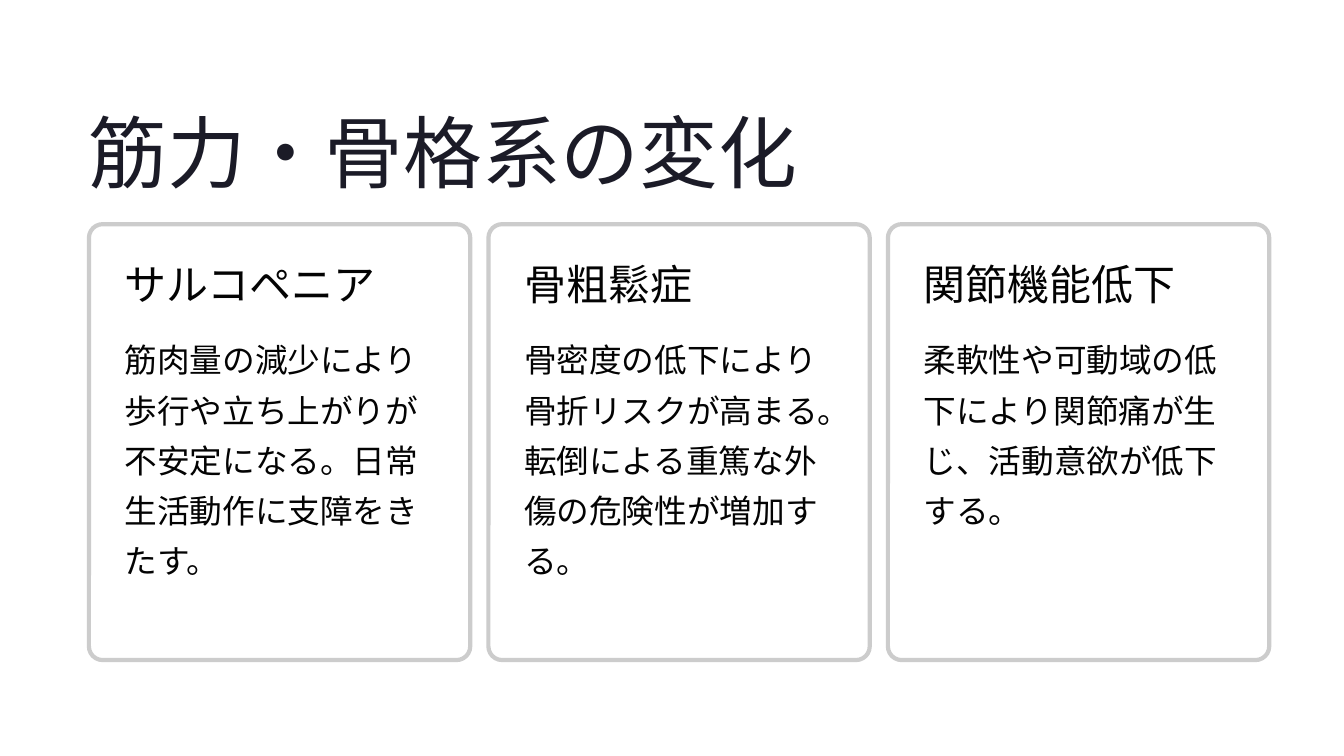
from lxml import etree
from pptx import Presentation
from pptx.dml.color import RGBColor
from pptx.enum import shapes, text
from pptx.oxml.ns import qn
from pptx.util import Cm, Pt

COLORS = {"title": "1B1B27", "body": "030303", "card": "FFFFFF", "border": "CCCCCC"}
CARDS = [
    ("サルコペニア", "筋肉量の減少により歩行や立ち上がりが不安定になる。日常生活動作に支障をきたす。", 5),
    ("骨粗鬆症", "骨密度の低下により骨折リスクが高まる。転倒による重篤な外傷の危険性が増加する。", 5),
    ("関節機能低下", "柔軟性や可動域の低下により関節痛が生じ、活動意欲が低下する。", 4),
]
LEFT, CARD_TOP = 2.69, 6.78
CARD_W, CARD_H, GAP = 11.53, 13.18, 0.55
PAD, BODY_LINE_H = 1.08, 1.7


def rgb(name):
    return RGBColor.from_string(COLORS[name])


def add_text(slide, content, box, *, size, leading, font="Inter", color="body", wrap=False):
    sp = slide.shapes.add_textbox(*map(Cm, box))
    tf = sp.text_frame
    tf.margin_left = tf.margin_top = tf.margin_right = tf.margin_bottom = 0
    tf.word_wrap = wrap
    tf.vertical_anchor = text.MSO_ANCHOR.TOP
    p = tf.paragraphs[0]
    p.alignment = text.PP_ALIGN.LEFT
    p.line_spacing = Pt(leading)
    r = p.add_run()
    r.text = content
    r.font.size = Pt(size)
    r.font.name = font
    r.font.color.rgb = rgb(color)


def add_title(slide, box):
    add_text(slide, "筋力・骨格系の変化", box, size=67.5, leading=84.5, color="title")


def add_card(slide, box, heading, body, lines):
    x, y, w, h = box
    sp = slide.shapes.add_shape(shapes.MSO_SHAPE.ROUNDED_RECTANGLE, *map(Cm, box))
    sp.shadow.inherit = False
    sp.adjustments[0] = 0.036
    sp.fill.solid()
    sp.fill.fore_color.rgb = rgb("card")
    fill = sp.fill._xPr.find(qn("a:solidFill"))
    etree.SubElement(fill[0], qn("a:alpha"), val="95000")
    sp.line.color.rgb = rgb("border")
    sp.line.width = Pt(3.6)

    text_w = w - 2 * PAD - 0.1
    add_text(slide, heading, (x + PAD, y + PAD, text_w, 1.65), size=36, leading=42)
    add_text(slide, body, (x + PAD, y + 3.18, text_w, lines * BODY_LINE_H),
             size=28, leading=43, font="Lato", wrap=True)


def main():
    prs = Presentation()
    prs.slide_width, prs.slide_height = Cm(40.64), Cm(22.86)
    slide = prs.slides.add_slide(prs.slide_layouts[6])
    add_title(slide, (LEFT, 3.02, 23.95, 3))
    for i, card in enumerate(CARDS):
        add_card(slide, (LEFT + i * (CARD_W + GAP), CARD_TOP, CARD_W, CARD_H), *card)
    prs.save("out.pptx")


if __name__ == "__main__":
    main()
